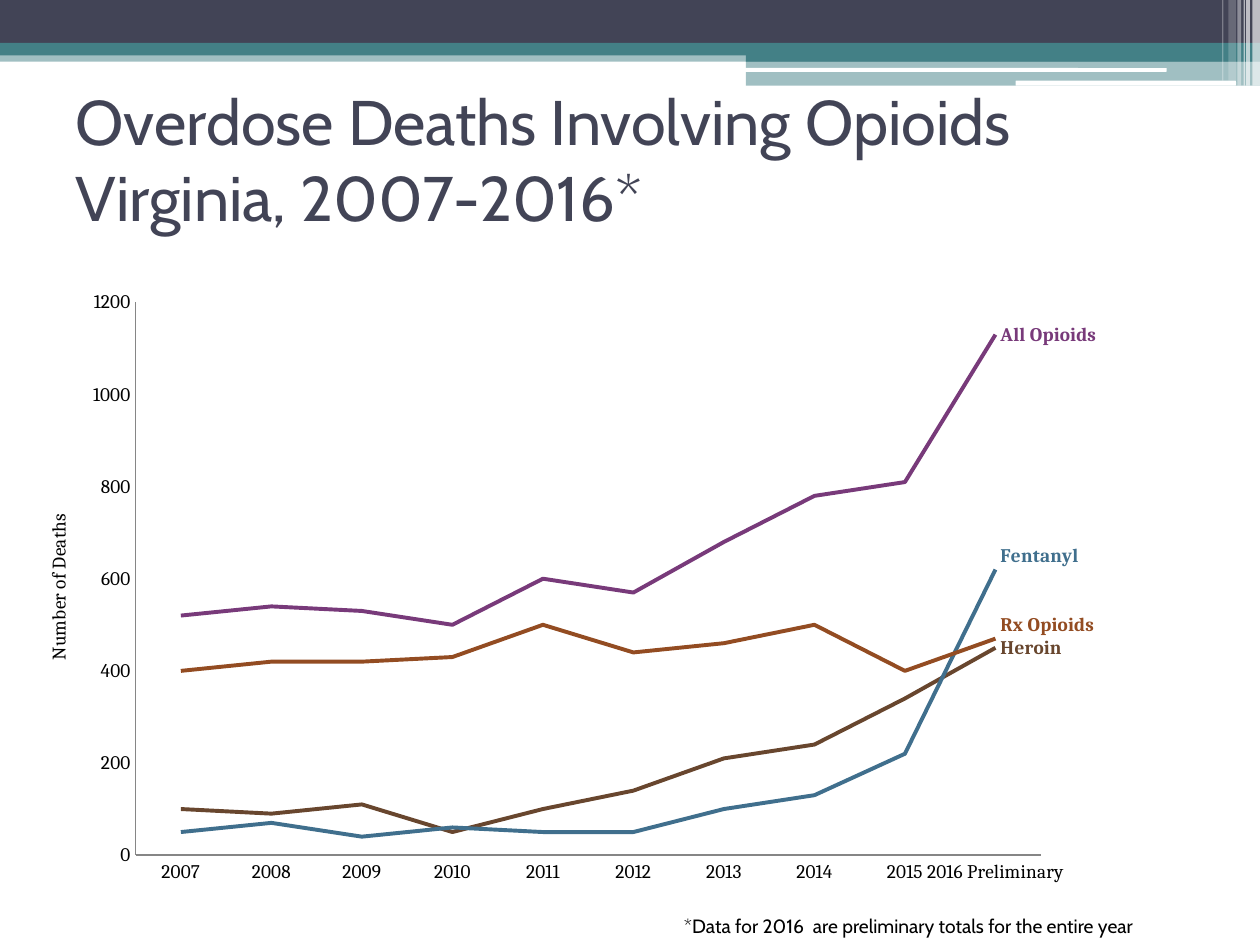
"""Build a slide with a line chart of overdose deaths involving opioids."""
from lxml import etree
from pptx import Presentation
from pptx import util as u
from pptx.chart.data import CategoryChartData
from pptx.dml.color import RGBColor
from pptx.enum import chart as ch, shapes, text
from pptx.oxml import ns

COLORS = {
    "navy": "424456", "teal": "438086", "white": "FFFFFF", "black": "000000",
    "axis": "868686", "purple": "783A7A", "brown": "68462E",
    "blue": "406F8D", "rust": "934C22",
}
RECT = shapes.MSO_SHAPE.RECTANGLE
ROUND = shapes.MSO_SHAPE.ROUNDED_RECTANGLE
BANDS = [
    (RECT, 0, 0.4, 10, 0.09, "teal", 50),
    (RECT, 0, 0, 10, 0.34, "navy", 100),
    (RECT, 0, 0.34, 10, 0.1, "teal", 100),
    (RECT, 5.92, 0.39, 4.08, 0.1, "teal", 100),
    (RECT, 5.92, 0.48, 4.08, 0.2, "teal", 50),
    (ROUND, 5.91, 0.54, 3.35, 0.03, "white", 100),
    (ROUND, 8.06, 0.64, 1.75, 0.04, "white", 100),
]
STRIPES = [
    (9.94, 0.06, 0.68, 65), (9.89, 0.03, 0.68, 65), (9.87, 0.01, 0.68, 60),
    (9.82, 0.03, 0.68, 40), (9.75, 0.06, 0.64, 20), (9.7, 0.01, 0.64, 30),
]
YEARS = [str(year) for year in range(2007, 2016)] + ["2016 Preliminary"]
SERIES = [
    ("All Opioids", "purple", None,
     [520, 540, 530, 500, 600, 570, 680, 780, 810, 1130]),
    ("Heroin", "brown", None,
     [100, 90, 110, 50, 100, 140, 210, 240, 340, 450]),
    ("Fentanyl", "blue", (0, -0.02),
     [50, 70, 40, 60, 50, 50, 100, 130, 220, 620]),
    ("Rx Opioids", "rust", (0, -0.02),
     [400, 420, 420, 430, 500, 440, 460, 500, 400, 470]),
]


def rgb(name):
    """Return the named colour."""
    return RGBColor.from_string(COLORS[name])


def set_font(font, name, size, color, bold=False):
    """Set the typeface, size, colour and weight of a font."""
    font.name, font.size, font.bold = name, u.Pt(size), bold
    font.color.rgb = rgb(color)


def add_band(s, kind, x, y, w, h, color, opacity):
    """Add a plain filled band, translucent when opacity is below 100."""
    sp = s.shapes.add_shape(kind, *map(u.Inches, (x, y, w, h)))
    sp.shadow.inherit = False
    sp.line.fill.background()
    sp.fill.solid()
    sp.fill.fore_color.rgb = rgb(color)
    if opacity < 100:
        clr = sp.fill._xPr.find(".//" + ns.qn("a:srgbClr"))
        etree.SubElement(clr, ns.qn("a:alpha"), val=str(opacity * 1000))


def set_text(sp, words, size, color):
    """Put one left-aligned paragraph into a shape."""
    tf = sp.text_frame
    tf.word_wrap = True
    tf.text = words
    p = tf.paragraphs[0]
    p.alignment = text.PP_ALIGN.LEFT
    set_font(p.font, "Cabin", size, color)
    return tf


def add_title(s, words):
    """Place and format the title."""
    sp = s.shapes.title
    sp.left, sp.top, sp.width, sp.height = map(u.Inches, (0.5, 0.67, 9, 1.17))
    tf = set_text(sp, words, 36, "navy")
    tf.vertical_anchor = text.MSO_ANCHOR.MIDDLE
    tf.auto_size = text.MSO_AUTO_SIZE.NONE


def add_note(s, words):
    """Add the footnote."""
    box = s.shapes.add_textbox(*map(u.Inches, (5.33, 7.21, 4.67, 0.29)))
    set_text(box, words, 11, "black")


def set_layout(parent, index, **values):
    """Give a chart element a manual layout at the given child index."""
    for old in parent.findall(ns.qn("c:layout")):
        parent.remove(old)
    layout = etree.Element(ns.qn("c:layout"))
    manual = etree.SubElement(layout, ns.qn("c:manualLayout"))
    for tag, val in values.items():
        etree.SubElement(manual, ns.qn("c:" + tag), val=str(val))
    parent.insert(index, layout)


def label_end(series, color, offset):
    """Name a series beside its last point."""
    series.data_labels.show_value = False
    label = series.points[len(YEARS) - 1].data_label
    set_font(label.font, "Cambria", 11, color, bold=True)
    label.position = ch.XL_LABEL_POSITION.RIGHT
    el = series._element.find(".//" + ns.qn("c:dLbl"))
    el.find(ns.qn("c:showVal")).set("val", "0")
    el.find(ns.qn("c:showSerName")).set("val", "1")
    if offset:
        set_layout(el, 1, x=offset[0], y=offset[1])


def format_axis(axis):
    """Give an axis a thin grey line without ticks or gridlines."""
    axis.has_major_gridlines = False
    axis.major_tick_mark = axis.minor_tick_mark = ch.XL_TICK_MARK.NONE
    axis.format.line.color.rgb = rgb("axis")
    axis.format.line.width = u.Pt(0.75)
    set_font(axis.tick_labels.font, "Cambria", 11, "black")


def add_line_chart(s):
    """Add the chart of deaths by year."""
    data = CategoryChartData()
    data.categories = YEARS
    for name, _, _, values in SERIES:
        data.add_series(name, values)
    frame = s.shapes.add_chart(
        ch.XL_CHART_TYPE.LINE, *map(u.Inches, (0.33, 1.75, 9.33, 5.61)), data)
    chart = frame.chart
    chart.has_legend = chart.has_title = False
    set_font(chart.font, "Cambria", 10, "black")
    format_axis(chart.category_axis)
    axis = chart.value_axis
    format_axis(axis)
    axis.minimum_scale, axis.maximum_scale, axis.major_unit = 0, 1200, 200
    axis.tick_labels.number_format = "###0"
    axis.tick_labels.number_format_is_linked = False
    tf = axis.axis_title.text_frame
    tf.text = "Number of Deaths"
    set_font(tf.paragraphs[0].font, "Cambria", 11, "black")
    chart.plots[0].vary_by_categories = False
    for series, (_, color, offset, _) in zip(chart.plots[0].series, SERIES):
        series.smooth = False
        series.marker.style = ch.XL_MARKER_STYLE.NONE
        series.format.line.color.rgb = rgb(color)
        series.format.line.width = u.Pt(2.25)
        label_end(series, color, offset)
    plot_area = chart._chartSpace.find(".//" + ns.qn("c:plotArea"))
    set_layout(plot_area, 0, layoutTarget="inner", xMode="edge", yMode="edge",
               x=0.08, y=0.116, w=0.77, h=0.782)


def main():
    """Build and save the slide."""
    prs = Presentation()
    prs.slide_width, prs.slide_height = u.Inches(10), u.Inches(7.5)
    s = prs.slides.add_slide(prs.slide_layouts[5])
    for band in BANDS:
        add_band(s, *band)
    for x, w, h, opacity in STRIPES:
        add_band(s, RECT, x, 0, w, h, "white", opacity)
    add_title(s, "Overdose Deaths Involving Opioids Virginia, 2007-2016*")
    add_note(s, "*Data for 2016  are preliminary totals for the entire year")
    add_line_chart(s)
    prs.save("out.pptx")


if __name__ == "__main__":
    main()
